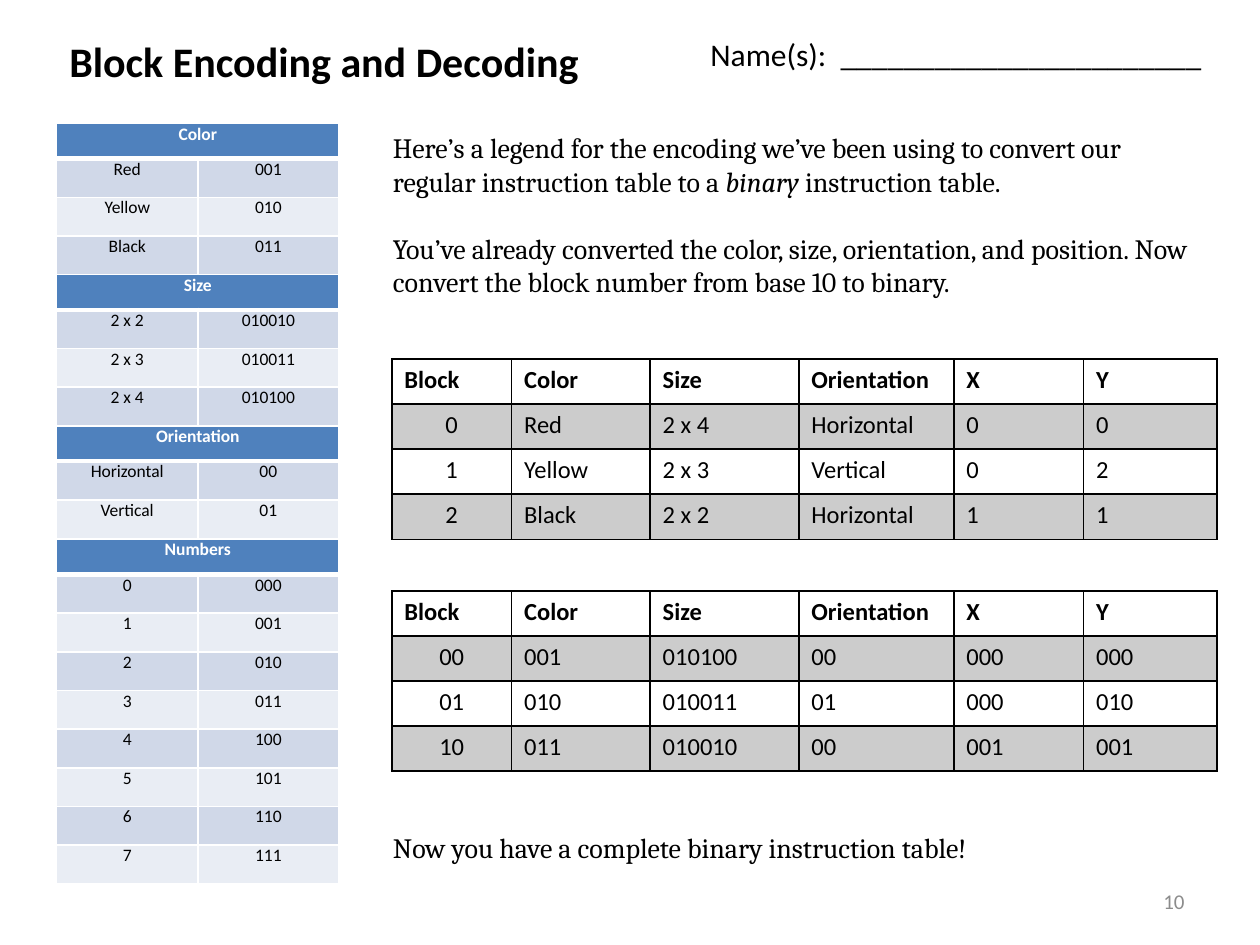
"""Build the block encoding and decoding worksheet slide."""
from lxml import etree
from pptx import Presentation
from pptx.dml.color import RGBColor
from pptx.enum.text import MSO_ANCHOR, MSO_AUTO_SIZE, PP_ALIGN
from pptx.oxml.ns import qn
from pptx.util import Inches, Pt

LEFT, CENTER, RIGHT = PP_ALIGN.LEFT, PP_ALIGN.CENTER, PP_ALIGN.RIGHT
TOP, MIDDLE = MSO_ANCHOR.TOP, MSO_ANCHOR.MIDDLE
GROW, NO_FIT = MSO_AUTO_SIZE.SHAPE_TO_FIT_TEXT, MSO_AUTO_SIZE.NONE

COLORS = {
    "text": "000000", "white": "FFFFFF", "header": "4F81BD",
    "odd": "D0D8E8", "even": "E9EDF4", "number": "8C8C8C",
}


def format_text(paragraph, size, font="Calibri", color="text", bold=False, align=LEFT):
    paragraph.alignment = align
    for run in paragraph.runs:
        run.font.size = Pt(size)
        run.font.name = font
        run.font.bold = bold
        run.font.color.rgb = RGBColor.from_string(COLORS[color])


def format_cell(cell, border, widths, fill=None, alpha=None):
    properties = cell._tc.get_or_add_tcPr()
    for side, width in zip("LRTB", widths):
        line = etree.SubElement(properties, qn(f"a:ln{side}"), w=str(Pt(width)))
        solid = etree.SubElement(line, qn("a:solidFill"))
        etree.SubElement(solid, qn("a:srgbClr"), val=COLORS[border])
    if fill is None:
        cell.fill.background()
        return
    cell.fill.solid()
    cell.fill.fore_color.rgb = RGBColor.from_string(COLORS[fill])
    if alpha is not None:
        color = properties.find(f"{qn('a:solidFill')}/{qn('a:srgbClr')}")
        etree.SubElement(color, qn("a:alpha"), val=str(alpha * 1000))


presentation = Presentation()
presentation.slide_width, presentation.slide_height = Inches(10), Inches(7.5)
slide = presentation.slides.add_slide(presentation.slide_layouts[5])

title = slide.shapes.title
title.left, title.top = Inches(0.45), Inches(0.23)
title.width, title.height = Inches(4.29), Inches(0.5)
title.text_frame.text = "Block Encoding and Decoding"
title.text_frame.word_wrap = False
title.text_frame.auto_size = NO_FIT
title.text_frame.vertical_anchor = TOP
format_text(title.text_frame.paragraphs[0], 24, bold=True)

legends = [
    ("Color", [("Red", "001"), ("Yellow", "010"), ("Black", "011")]),
    ("Size", [("2 x 2", "010010"), ("2 x 3", "010011"), ("2 x 4", "010100")]),
    ("Orientation", [("Horizontal", "00"), ("Vertical", "01")]),
    ("Numbers", [(str(number), f"{number:03b}") for number in range(8)]),
]
legend_tops = [0.98, 2.18, 3.38, 4.28]
header_height, row_height = 0.28, 0.307
for top, (heading, entries) in zip(legend_tops, legends):
    height = header_height + row_height * len(entries)
    table = slide.shapes.add_table(
        len(entries) + 1, 2, Inches(0.45), Inches(top), Inches(2.24), Inches(height)
    ).table
    table.first_row = table.horz_banding = False
    for row_index, values in enumerate([(heading, ""), *entries]):
        is_header = row_index == 0
        table.rows[row_index].height = Inches(header_height if is_header else row_height)
        fill = "header" if is_header else ("odd" if row_index % 2 else "even")
        widths = (1, 1, 3 if row_index == 1 else 1, 3 if is_header else 1)
        for column_index, value in enumerate(values):
            cell = table.cell(row_index, column_index)
            cell.margin_left = cell.margin_right = cell.margin_top = cell.margin_bottom = 0
            cell.text_frame.text = value
            color = "white" if is_header else "text"
            format_text(cell.text_frame.paragraphs[0], 10, color=color, bold=is_header, align=CENTER)
            format_cell(cell, "white", widths, fill)
    table.cell(0, 0).merge(table.cell(0, 1))

headings = ("Block", "Color", "Size", "Orientation", "X", "Y")
column_widths = (0.95, 1.1, 1.18, 1.23, 1.03, 1.06)
instruction_tables = [
    (2.85, [
        ("0", "Red", "2 x 4", "Horizontal", "0", "0"),
        ("1", "Yellow", "2 x 3", "Vertical", "0", "2"),
        ("2", "Black", "2 x 2", "Horizontal", "1", "1"),
    ]),
    (4.69, [
        ("00", "001", "010100", "00", "000", "000"),
        ("01", "010", "010011", "01", "000", "010"),
        ("10", "011", "010010", "00", "001", "001"),
    ]),
]
for top, instructions in instruction_tables:
    table = slide.shapes.add_table(
        4, 6, Inches(3.11), Inches(top), Inches(6.56), Inches(1.43)
    ).table
    table.first_row = table.horz_banding = False
    for column, width in zip(table.columns, column_widths):
        column.width = Inches(width)
    for row_index, values in enumerate([headings, *instructions]):
        for column_index, value in enumerate(values):
            cell = table.cell(row_index, column_index)
            cell.text_frame.text = value
            align = CENTER if row_index and column_index == 0 else LEFT
            format_text(cell.text_frame.paragraphs[0], 14, bold=row_index == 0, align=align)
            format_cell(cell, "text", (1, 1, 1, 1), "text" if row_index % 2 else None, 20)

text_boxes = [
    ((5.54, 0.23, 4.13, 0.4), [["Name(s):\u00a0 _______________________"]], 18, "Calibri", "text", LEFT, TOP),
    ((7.17, 6.95, 2.33, 0.4), [["10"]], 12, "Calibri", "number", RIGHT, MIDDLE),
    ((3.02, 0.99, 6.65, 1.45), [
        ["Here’s a legend for the encoding we’ve been using to convert our regular "
         "instruction table to a ", "binary", " instruction table."],
        ["You’ve already converted the color, size, orientation, and position. "
         "Now convert the block number from base 10 to binary."],
    ], 16, "Cambria", "text", LEFT, TOP),
    ((3.02, 6.54, 6.65, 0.37), [["Now you have a complete binary instruction table!"]],
     16, "Cambria", "text", LEFT, TOP),
]
for box, paragraphs, size, font, color, align, anchor in text_boxes:
    text_frame = slide.shapes.add_textbox(*map(Inches, box)).text_frame
    text_frame.word_wrap = True
    text_frame.auto_size = NO_FIT if anchor == MIDDLE else GROW
    text_frame.vertical_anchor = anchor
    for index, parts in enumerate(paragraphs):
        paragraph = text_frame.add_paragraph() if index else text_frame.paragraphs[0]
        paragraph.space_before = Pt(19 if index else 0)
        for part in parts:
            run = paragraph.add_run()
            run.text = part
            run.font.italic = part == "binary"
        format_text(paragraph, size, font, color, align=align)

presentation.save("out.pptx")
